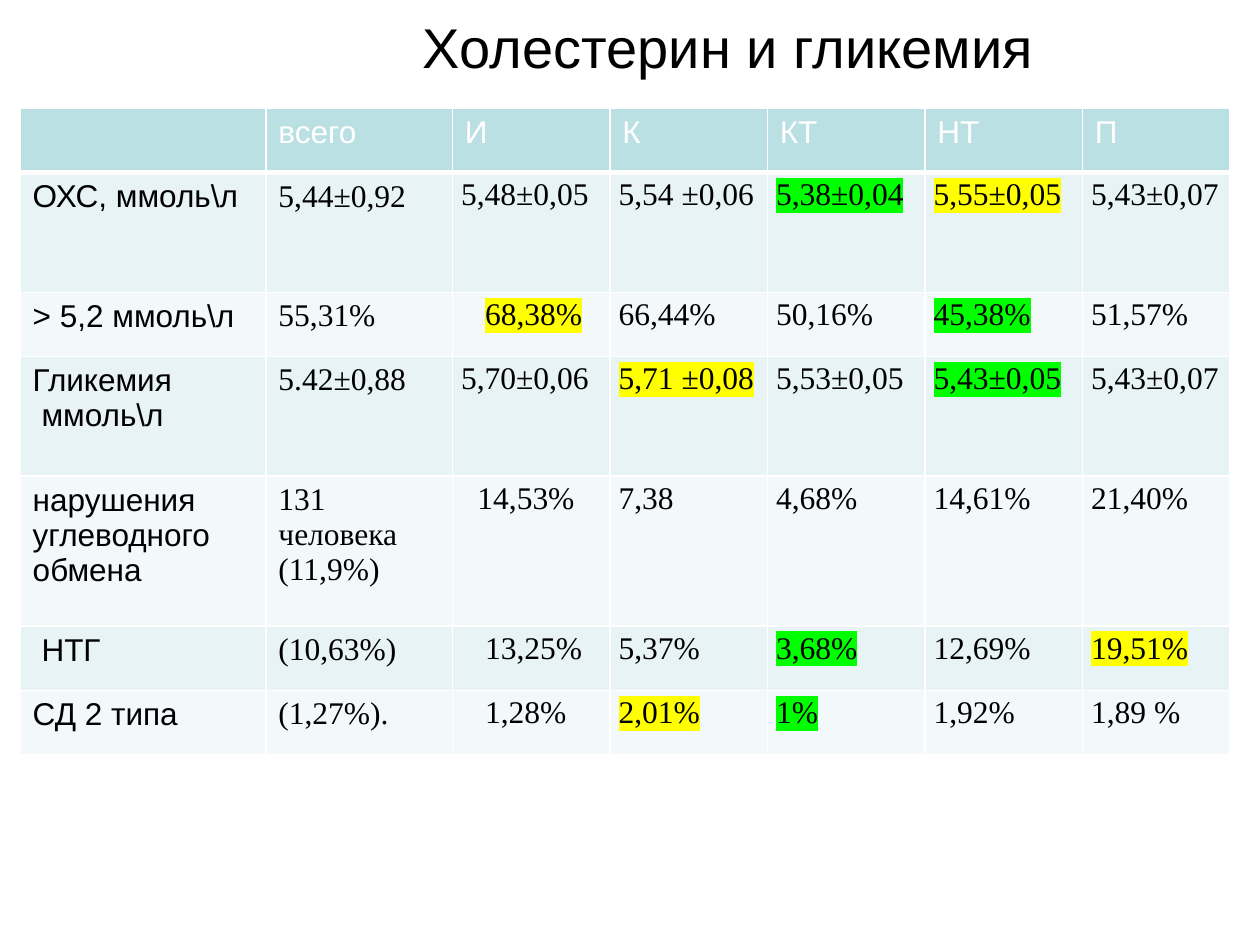
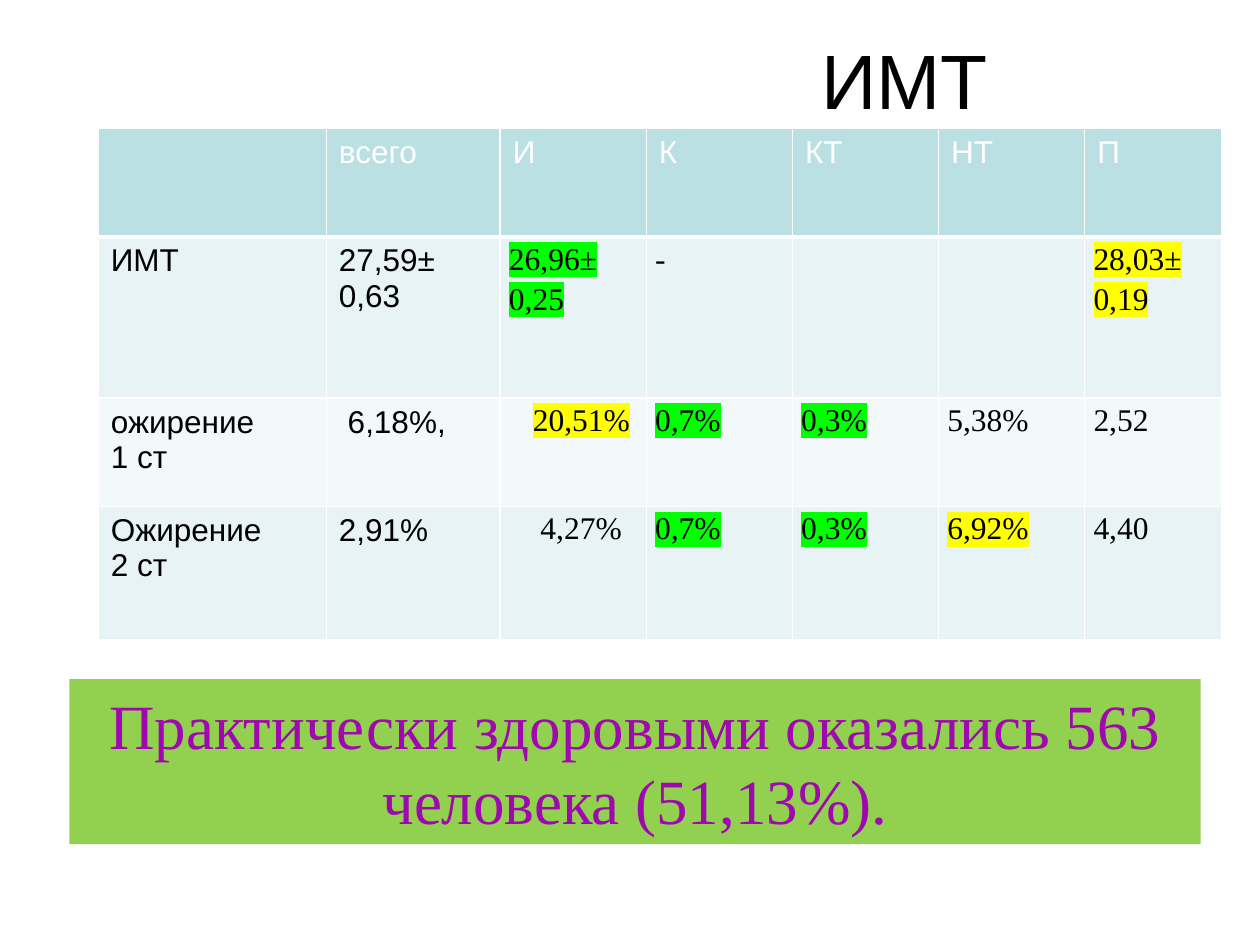
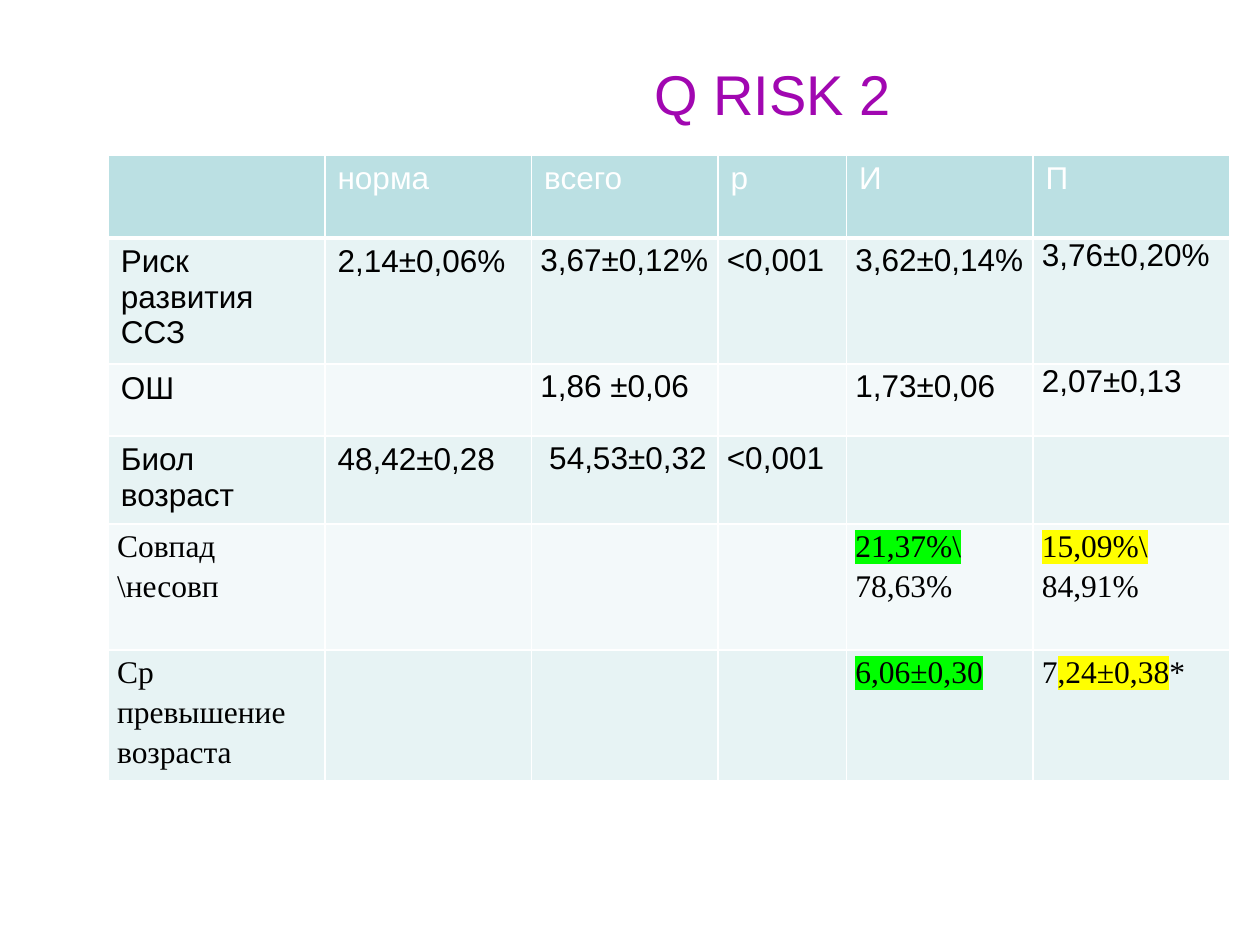
"""Build three slides of screening results as tables."""
from dataclasses import dataclass

from lxml import etree
from pptx import Presentation
from pptx.dml.color import RGBColor
from pptx.enum.shapes import MSO_SHAPE
from pptx.enum.text import MSO_ANCHOR, PP_ALIGN
from pptx.oxml.ns import qn
from pptx.util import Inches, Pt

RECTANGLE = MSO_SHAPE.RECTANGLE
MIDDLE = MSO_ANCHOR.MIDDLE
CENTER = PP_ALIGN.CENTER

BLACK = RGBColor(0x00, 0x00, 0x00)
WHITE = RGBColor(0xFF, 0xFF, 0xFF)
HEADER = RGBColor(0xBB, 0xE0, 0xE3)
BANDS = (RGBColor(0xE7, 0xF3, 0xF4), RGBColor(0xF3, 0xF9, 0xFA))
PURPLE = RGBColor(0xA1, 0x07, 0xB1)
LIME = RGBColor(0x92, 0xD0, 0x50)
GREEN = RGBColor(0x00, 0xFF, 0x00)
YELLOW = RGBColor(0xFF, 0xFF, 0x00)

SANS = "Arial"
SERIF = "Times New Roman"


@dataclass
class Run:
    """Text with an optional highlight and paragraph indent in inches."""
    text: str
    highlight: RGBColor = None
    indent: float = 0


@dataclass
class CellStyle:
    """Font, insets and line spacing of a table cell."""
    font: str
    tight: bool = False
    spacing: float = 1.0


LABEL = CellStyle(SANS)
SERIF_LABEL = CellStyle(SERIF)
VALUE = CellStyle(SERIF, True, 1.15)
SANS_VALUE = CellStyle(SANS, True, 1.15)
SINGLE_VALUE = CellStyle(SANS, True)


def green(text):
    """Return a run highlighted in green."""
    return Run(text, GREEN)


def yellow(text, indent=0):
    """Return a run highlighted in yellow."""
    return Run(text, YELLOW, indent)


def indented(text, indent):
    """Return a plain run in an indented paragraph."""
    return Run(text, None, indent)


class Deck:
    """Hold the shared style and the current slide."""

    def __init__(self):
        """Start an empty presentation."""
        self.presentation = Presentation()
        self.presentation.slide_width = Inches(10)
        self.presentation.slide_height = Inches(7.5)
        self.slide = None

    def new_slide(self):
        """Add a blank slide and make it current."""
        layout = self.presentation.slide_layouts[6]
        self.slide = self.presentation.slides.add_slide(layout)

    def run(self, paragraph, text, size, font, color, highlight=None):
        """Add one styled run to a paragraph."""
        run = paragraph.add_run()
        run.text = text
        run.font.size = Pt(size)
        run.font.name = font
        run.font.color.rgb = color
        if highlight is not None:
            mark = etree.Element(qn("a:highlight"))
            etree.SubElement(mark, qn("a:srgbClr"), val=str(highlight))
            run.font._element.find(qn("a:solidFill")).addnext(mark)

    def title(self, text, box, size, color=BLACK, shift=0):
        """Add a centred title, moved right by a wider left inset."""
        shape = self.slide.shapes.add_textbox(*map(Inches, box))
        frame = shape.text_frame
        frame.word_wrap = True
        frame.vertical_anchor = MIDDLE
        frame.margin_left = Inches(0.1 + 2 * shift)
        paragraph = frame.paragraphs[0]
        paragraph.alignment = CENTER
        self.run(paragraph, text, size, SANS, color)

    def banner(self, text, box):
        """Add a filled rectangle with a large centred statement."""
        shape = self.slide.shapes.add_shape(RECTANGLE, *map(Inches, box))
        shape.shadow.inherit = False
        shape.fill.solid()
        shape.fill.fore_color.rgb = LIME
        shape.line.fill.background()
        shape.text_frame.word_wrap = True
        paragraph = shape.text_frame.paragraphs[0]
        paragraph.alignment = CENTER
        self.run(paragraph, text, 36, SERIF, PURPLE)

    def borders(self, cell, bottom):
        """Draw white borders around a cell."""
        properties = cell._tc.get_or_add_tcPr()
        for side, width in (("L", 1), ("R", 1), ("T", 1), ("B", bottom)):
            line = etree.SubElement(properties, qn(f"a:ln{side}"), w=str(Pt(width)))
            fill = etree.SubElement(line, qn("a:solidFill"))
            etree.SubElement(fill, qn("a:srgbClr"), val=str(WHITE))

    def fill_cell(self, cell, content, style, color):
        """Write runs into a cell, starting a paragraph at each line end."""
        if style.tight:
            cell.margin_left = cell.margin_right = Inches(0.07)
            cell.margin_top = cell.margin_bottom = 0
        runs = content if isinstance(content, list) else [content]
        paragraph = cell.text_frame.paragraphs[0]
        paragraph.line_spacing = style.spacing
        for part in runs:
            part = Run(part) if isinstance(part, str) else part
            for number, text in enumerate(part.text.split("\n")):
                if number:
                    paragraph = cell.text_frame.add_paragraph()
                    paragraph.line_spacing = style.spacing
                if part.indent:
                    properties = paragraph._p.get_or_add_pPr()
                    properties.set("marL", str(Inches(part.indent)))
                    properties.set("indent", "0")
                if text:
                    self.run(paragraph, text, 18, style.font, color, part.highlight)

    def table(self, left, top, widths, heights, header, rows):
        """Add a banded table; each row pairs its cell styles and contents."""
        shape = self.slide.shapes.add_table(
            len(heights), len(widths), Inches(left), Inches(top),
            Inches(sum(widths)), Inches(sum(heights)))
        table = shape.table
        table.horz_banding = False
        for column, width in zip(table.columns, widths):
            column.width = Inches(width)
        for row, height in zip(table.rows, heights):
            row.height = Inches(height)
        lines = [([LABEL] * len(header), header)] + rows
        for row, (styles, contents) in enumerate(lines):
            for column, (style, content) in enumerate(zip(styles, contents)):
                cell = table.cell(row, column)
                self.borders(cell, 1 if row else 3)
                cell.fill.solid()
                cell.fill.fore_color.rgb = BANDS[(row - 1) % 2] if row else HEADER
                self.fill_cell(cell, content, style, BLACK if row else WHITE)


def cholesterol_slide(deck):
    """Build the cholesterol and glycaemia slide."""
    deck.new_slide()
    deck.title("Холестерин и гликемия", (1.5, 0.15, 8.5, 0.43), 32, shift=0.03)
    styles = [LABEL, SERIF_LABEL] + [VALUE] * 5
    rows = [
        ["ОХС, ммоль\\л", "5,44±0,92", "5,48±0,05", "5,54 ±0,06",
         green("5,38±0,04"), yellow("5,55±0,05"), "5,43±0,07"],
        ["> 5,2 ммоль\\л", "55,31%", yellow("68,38%", 0.19), "66,44%",
         "50,16%", green("45,38%"), "51,57%"],
        [["Гликемия\n", indented("ммоль\\л", 0.07)], "5.42±0,88", "5,70±0,06",
         yellow("5,71 ±0,08"), "5,53±0,05", green("5,43±0,05"), "5,43±0,07"],
        ["нарушения углеводного обмена", "131 человека (11,9%)",
         indented("14,53%", 0.13), "7,38", "4,68%", "14,61%", "21,40%"],
        [indented("НТГ", 0.07), "(10,63%)", indented("13,25%", 0.19), "5,37%",
         green("3,68%"), "12,69%", yellow("19,51%")],
        ["СД 2 типа", "(1,27%).", indented("1,28%", 0.19), yellow("2,01%"),
         green("1%"), "1,92%", "1,89 %"],
    ]
    deck.table(0.16, 0.86, [1.95, 1.48] + [1.25] * 4 + [1.17],
               [0.51, 0.95, 0.51, 0.95, 1.19, 0.51, 0.51],
               ["", "всего", "И", "К", "КТ", "НТ", "П"],
               [(styles, row) for row in rows])


def body_mass_slide(deck):
    """Build the body mass index slide."""
    deck.new_slide()
    deck.title("ИМТ", (1.5, 0, 8.5, 1.25), 44, shift=1.43)
    styles = [LABEL] * 2 + [VALUE] * 5
    rows = [
        ["ИМТ", "27,59±\n0,63", green("26,96±\n0,25"), "-", "", "",
         yellow("28,03±\n0,19")],
        ["ожирение\n1 ст", indented("6,18%,", 0.07), yellow("20,51%", 0.19),
         green("0,7%"), green("0,3%"), "5,38%", "2,52"],
        ["Ожирение\n2 ст", "2,91%", indented("4,27%", 0.25), green("0,7%"),
         green("0,3%"), yellow("6,92%"), "4,40"],
    ]
    deck.table(0.78, 1.02, [1.81, 1.38] + [1.16] * 4 + [1.09],
               [0.86, 1.28, 0.86, 1.06],
               ["", "всего", "И", "К", "КТ", "НТ", "П"],
               [(styles, row) for row in rows])
    deck.banner("Практически здоровыми оказались 563 человека (51,13%).",
                (0.55, 5.39, 8.98, 1.31))


def risk_slide(deck):
    """Build the cardiovascular risk slide."""
    deck.new_slide()
    deck.title("Q RISK 2", (1.85, 0, 8.5, 1.48), 32, PURPLE, shift=0.03)
    sans = [LABEL] * 2 + [SANS_VALUE] * 3 + [SINGLE_VALUE]
    serif = [VALUE] * 6
    rows = [
        (sans, ["Риск развития ССЗ", "2,14±0,06%", "3,67±0,12%", "<0,001",
                "3,62±0,14%", "3,76±0,20%"]),
        (sans, ["ОШ", "", "1,86 ±0,06", "", "1,73±0,06", "2,07±0,13"]),
        (sans, ["Биол возраст", "48,42±0,28", indented("54,53±0,32", 0.07),
                "<0,001", "", ""]),
        (serif, ["Совпад \\несовп", "", "", "", [green("21,37%\\"), "\n78,63%"],
                 [yellow("15,09%\\"), "\n84,91%"]]),
        (serif, ["Ср превышение возраста", "", "", "", green("6,06±0,30"),
                 ["7", yellow(",24±0,38"), "*"]]),
    ]
    deck.table(0.86, 1.23, [1.72, 1.64, 1.48, 1.02, 1.48, 1.56],
               [0.66, 0.94, 0.57, 0.66, 1, 0.94],
               ["", "норма", "всего", "р", "И", "П"], rows)


def main():
    """Build and save the presentation."""
    deck = Deck()
    cholesterol_slide(deck)
    body_mass_slide(deck)
    risk_slide(deck)
    deck.presentation.save("out.pptx")


if __name__ == "__main__":
    main()
